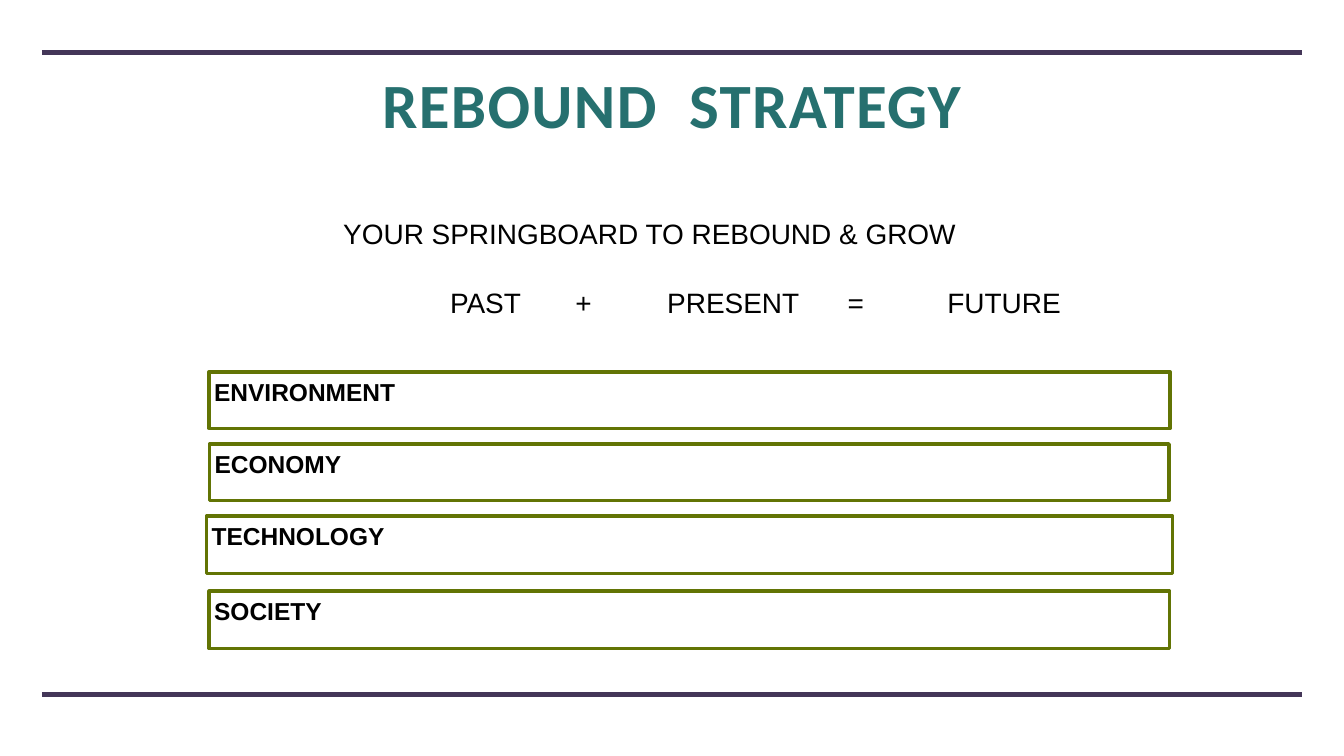
from lxml import etree
from pptx import Presentation
from pptx.dml.color import RGBColor
from pptx.enum import shapes, text
from pptx.oxml.ns import qn
from pptx.util import Inches, Pt

TEAL = RGBColor(0x26, 0x70, 0x6F)
PURPLE = RGBColor(0x44, 0x36, 0x58)
OLIVE = RGBColor(0x62, 0x74, 0x04)
BLACK = RGBColor(0, 0, 0)


def prepare_frame(frame):
    frame.word_wrap = True
    frame.auto_size = text.MSO_AUTO_SIZE.NONE
    frame.vertical_anchor = text.MSO_ANCHOR.TOP
    frame.margin_left = frame.margin_right = Inches(0.06)
    frame.margin_top = frame.margin_bottom = Inches(0.06)


def style_font(font, name, size, color, bold=False):
    font.name, font.size, font.bold = name, Pt(size), bold
    font.color.rgb = color


prs = Presentation()
prs.slide_width, prs.slide_height = Inches(26.67), Inches(15)
slide = prs.slides.add_slide(prs.slide_layouts[5])

# Rules above and below the content
for y in (1.04, 13.78):
    rule = slide.shapes.add_connector(
        shapes.MSO_CONNECTOR.STRAIGHT, Inches(0.83), Inches(y), Inches(25.83), Inches(y))
    rule.line.color.rgb = PURPLE
    rule.line.width = Pt(6)
    etree.SubElement(rule._element.spPr, qn("a:effectLst"))

# Title
title = slide.shapes.title
title.left, title.top = Inches(2.28), Inches(1.4)
title.width, title.height = Inches(22.1), Inches(1.81)
prepare_frame(title.text_frame)
heading = title.text_frame.paragraphs[0]
heading.text = "REBOUND  STRATEGY"
heading.alignment = text.PP_ALIGN.CENTER
heading.line_spacing = 0.9
style_font(heading.font, "Calibri", 90, TEAL, bold=True)
heading.runs[0]._r.get_or_add_rPr().set("spc", "200")

# Tagline and equation, placed on tab stops
strategy = slide.shapes.add_textbox(Inches(3.53), Inches(4.24), Inches(19.62), Inches(2.2)).text_frame
prepare_frame(strategy)
strategy_lines = [
    (["YOUR SPRINGBOARD TO REBOUND & GROW"], [3.22]),
    (["PAST", "+", "PRESENT", "=", "FUTURE"], [5.34, 7.83, 9.65, 13.23, 15.21]),
]
for i, (words, stops) in enumerate(strategy_lines):
    line = strategy.add_paragraph() if i else strategy.paragraphs[0]
    line.text = "".join("\t" + word for word in words)
    tabs = etree.SubElement(line._p.get_or_add_pPr(), qn("a:tabLst"))
    for stop in stops:
        etree.SubElement(tabs, qn("a:tab"), pos=str(Inches(stop)), algn="l")
    if i:
        line.space_before = Pt(50)
    style_font(line.font, "Arial", 40, BLACK)

# Framed fields, each with its label
fields = [
    ("ENVIRONMENT", 4.15, 7.38, 19.07, 1.12),
    ("ECONOMY", 4.16, 8.81, 19.04, 1.12),
    ("TECHNOLOGY", 4.1, 10.24, 19.17, 1.14),
    ("SOCIETY", 4.15, 11.73, 19.06, 1.14),
]
for name, left, top, width, height in fields:
    field = slide.shapes.add_group_shape().shapes
    frame = field.add_shape(
        shapes.MSO_SHAPE.RECTANGLE, Inches(left), Inches(top), Inches(width), Inches(height))
    frame.shadow.inherit = False
    frame.fill.background()
    frame.line.color.rgb = OLIVE
    frame.line.width = Pt(5)
    label = field.add_textbox(
        Inches(left + 0.04), Inches(top + 0.04), Inches(width - 0.07), Inches(0.69)).text_frame
    prepare_frame(label)
    label.text = name
    style_font(label.paragraphs[0].font, "Arial", 35, BLACK, bold=True)

prs.save("out.pptx")
